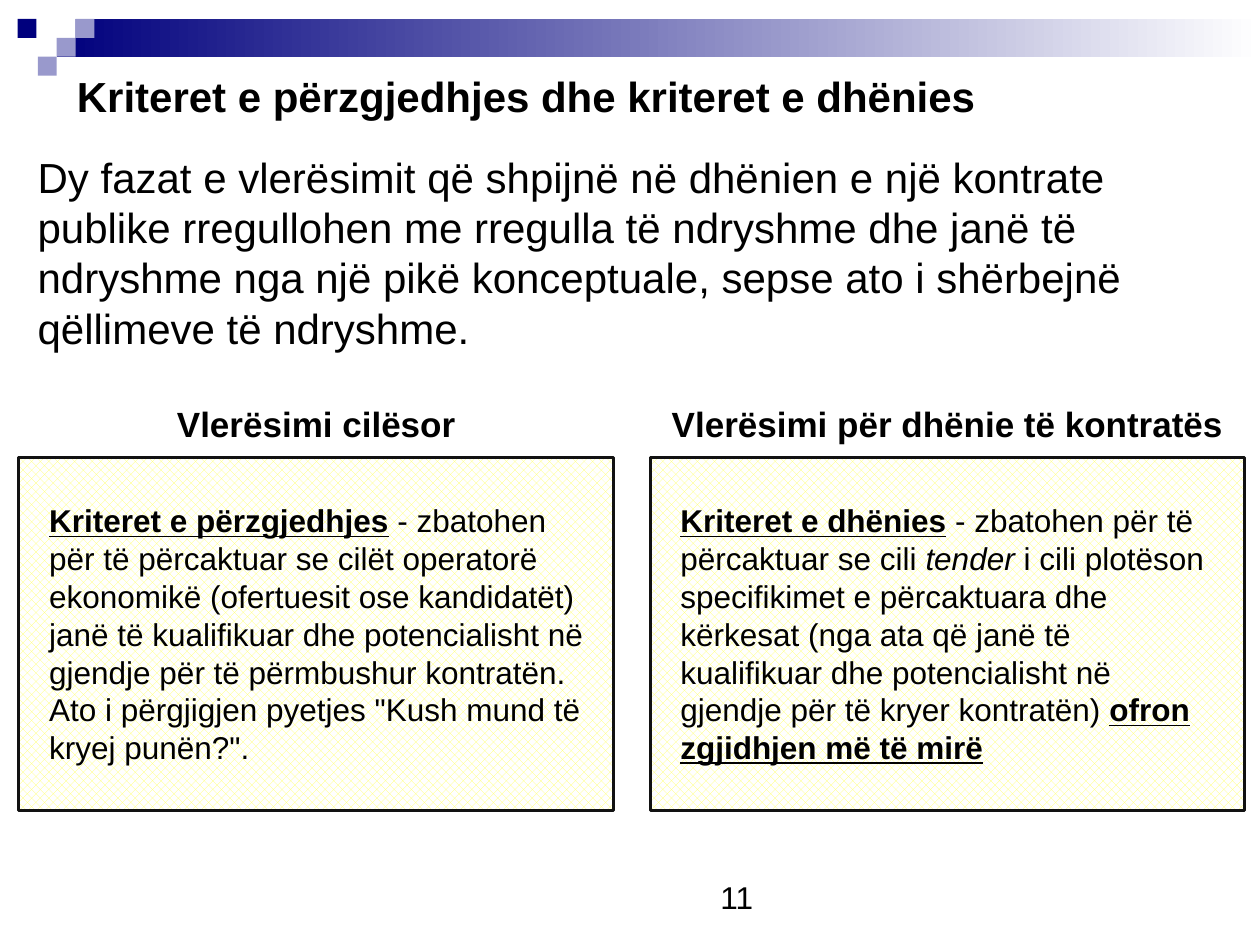
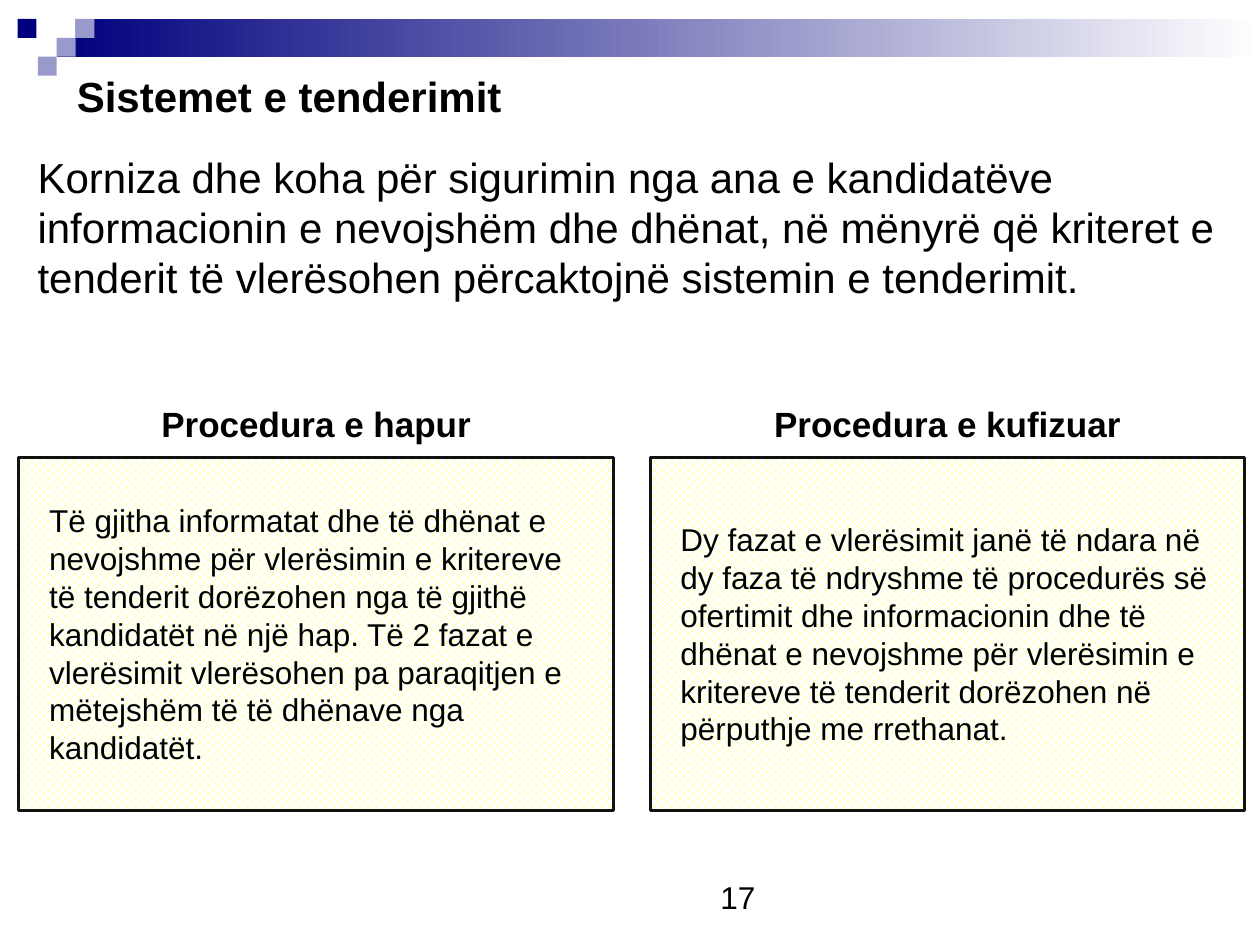
from pptx import Presentation
from pptx.dml.color import RGBColor
from pptx.enum import dml, shapes, text
from pptx.util import Inches, Pt

HUES = {"navy": "00007D", "lilac": "9999CC", "white": "FFFFFF",
        "lemon": "FFFF66", "edge": "121212", "ink": "000000"}
STYLES = {"plain": {}, "bold": {"bold": True}, "italic": {"italic": True},
          "key": {"bold": True, "underline": True}}
UNIT = 0.15
STEPS = [(3, 1, "white"), (4, 1, "lilac"), (0.93, 1, "navy"),
         (3, 2, "lilac"), (2, 3, "lilac")]
LEFT, WIDE, PITCH = 0.15, 4.72, 5.01

SLIDES = [
    {"title": "Kriteret e përzgjedhjes dhe kriteret e dhënies",
     "page": "11",
     "intro": "Dy fazat e vlerësimit që shpijnë në dhënien e një kontrate "
              "publike rregullohen me rregulla të ndryshme dhe janë të ndryshme "
              "nga një pikë konceptuale, sepse ato i shërbejnë qëllimeve të "
              "ndryshme.",
     "cards": [
         ("Vlerësimi cilësor", [
             ("Kriteret e përzgjedhjes", "key"),
             (" - zbatohen për të përcaktuar se cilët operatorë ekonomikë "
              "(ofertuesit ose kandidatët) janë të kualifikuar dhe potencialisht "
              "në gjendje për të përmbushur kontratën. Ato i përgjigjen pyetjes "
              '"Kush mund të kryej punën?".', "plain")]),
         ("Vlerësimi për dhënie të kontratës", [
             ("Kriteret e dhënies", "key"),
             (" - zbatohen për të përcaktuar se cili ", "plain"),
             ("tender", "italic"),
             (" i cili plotëson specifikimet e përcaktuara dhe kërkesat (nga ata "
              "që janë të kualifikuar dhe potencialisht në gjendje për të kryer "
              "kontratën) ", "plain"),
             ("ofron zgjidhjen më të mirë", "key")])]},
    {"title": "Sistemet e tenderimit",
     "page": "17",
     "intro": "Korniza dhe koha për sigurimin nga ana e kandidatëve "
              "informacionin e nevojshëm dhe dhënat, në mënyrë që kriteret e "
              "tenderit të vlerësohen përcaktojnë sistemin e tenderimit.",
     "cards": [
         ("Procedura e hapur", [
             ("Të gjitha informatat dhe të dhënat e nevojshme për vlerësimin e "
              "kritereve të tenderit dorëzohen nga të gjithë kandidatët në një "
              "hap. Të 2 fazat e vlerësimit vlerësohen pa paraqitjen e mëtejshëm "
              "të të dhënave nga kandidatët.", "plain")]),
         ("Procedura e kufizuar", [
             ("Dy fazat e vlerësimit janë të ndara në dy faza të ndryshme të "
              "procedurës së ofertimit dhe informacionin dhe të dhënat e "
              "nevojshme për vlerësimin e kritereve të tenderit dorëzohen në "
              "përputhje me rrethanat.", "plain")])]},
]


def hue(name):
    """Return the named colour."""
    return RGBColor.from_string(HUES[name])


def apply(item, values):
    """Set every attribute in values on item."""
    for name, value in values.items():
        setattr(item, name, value)


def write(shape, runs, size, pad=(0.1, 0.05), align="LEFT", anchor="TOP",
          wrap=True):
    """Fill a shape with one paragraph of styled runs."""
    frame = shape.text_frame
    side, edge = map(Inches, pad)
    apply(frame, {"word_wrap": wrap, "auto_size": text.MSO_AUTO_SIZE.NONE,
                  "vertical_anchor": text.MSO_ANCHOR[anchor],
                  "margin_left": side, "margin_right": side,
                  "margin_top": edge, "margin_bottom": edge})
    para = frame.paragraphs[0]
    apply(para, {"alignment": text.PP_ALIGN[align], "space_before": Pt(0)})
    for words, style in runs:
        run = para.add_run()
        run.text = words
        apply(run.font, {"name": "Arial", "size": Pt(size), **STYLES[style]})
        run.font.color.rgb = hue("ink")


def add_box(slide, box):
    """Add a rectangle without shadow or line."""
    shape = slide.shapes.add_shape(shapes.MSO_SHAPE.RECTANGLE, *map(Inches, box))
    shape.shadow.inherit = False
    shape.line.fill.background()
    return shape


def add_text(slide, box, runs, size, **format):
    """Add a text box."""
    write(slide.shapes.add_textbox(*map(Inches, box)), runs, size, **format)


def add_band(slide):
    """Draw the fading band and its stepped squares."""
    band = add_box(slide, (3 * UNIT, UNIT, 10 - 3 * UNIT, 2 * UNIT))
    band.fill.gradient()
    band.fill.gradient_angle = 0
    for stop, name in zip(band.fill.gradient_stops, ("navy", "white")):
        stop.color.rgb = hue(name)
    for col, row, name in STEPS:
        step = add_box(slide, (col * UNIT, row * UNIT, UNIT, UNIT))
        step.fill.solid()
        step.fill.fore_color.rgb = hue(name)


def add_title(slide, words):
    """Place and format the title placeholder."""
    title = slide.shapes.title
    apply(title, dict(zip(("left", "top", "width", "height"),
                          map(Inches, (0.51, 0.51, 9.29, 0.5)))))
    write(title, [(words, "bold")], 24)


def add_card(slide, box, head, runs):
    """Draw a heading over a framed, patterned panel."""
    left, top, wide, high = box
    add_text(slide, (left, top, wide, 0.34), [(head, "bold")], 20,
             pad=(0, 0), align="CENTER", anchor="MIDDLE")
    panel = add_box(slide, (left, top + 0.44, wide, high - 0.44))
    panel.fill.patterned()
    panel.fill.pattern = dml.MSO_PATTERN.PERCENT_50
    panel.fill.fore_color.rgb = hue("lemon")
    panel.fill.back_color.rgb = hue("white")
    panel.line.color.rgb = hue("edge")
    panel.line.width = Pt(1.75)
    write(panel, runs, 18, pad=(0.24, 0.24), anchor="MIDDLE")


def add_slide(deck, data):
    """Build one slide with an intro and two cards."""
    slide = deck.slides.add_slide(deck.slide_layouts[5])
    add_band(slide)
    add_title(slide, data["title"])
    add_text(slide, (0.2, 1.15, 9.61, 1.72), [(data["intro"], "plain")], 24)
    for spot, (head, runs) in enumerate(data["cards"]):
        add_card(slide, (LEFT + spot * PITCH, 3.19, WIDE, 3.24), head, runs)
    add_text(slide, (5.62, 6.92, 0.64, 0.4), [(data["page"], "plain")], 18,
             wrap=False)


def main():
    """Build and save the deck."""
    deck = Presentation()
    apply(deck, {"slide_width": Inches(10), "slide_height": Inches(7.5)})
    for data in SLIDES:
        add_slide(deck, data)
    deck.save("out.pptx")


if __name__ == "__main__":
    main()
